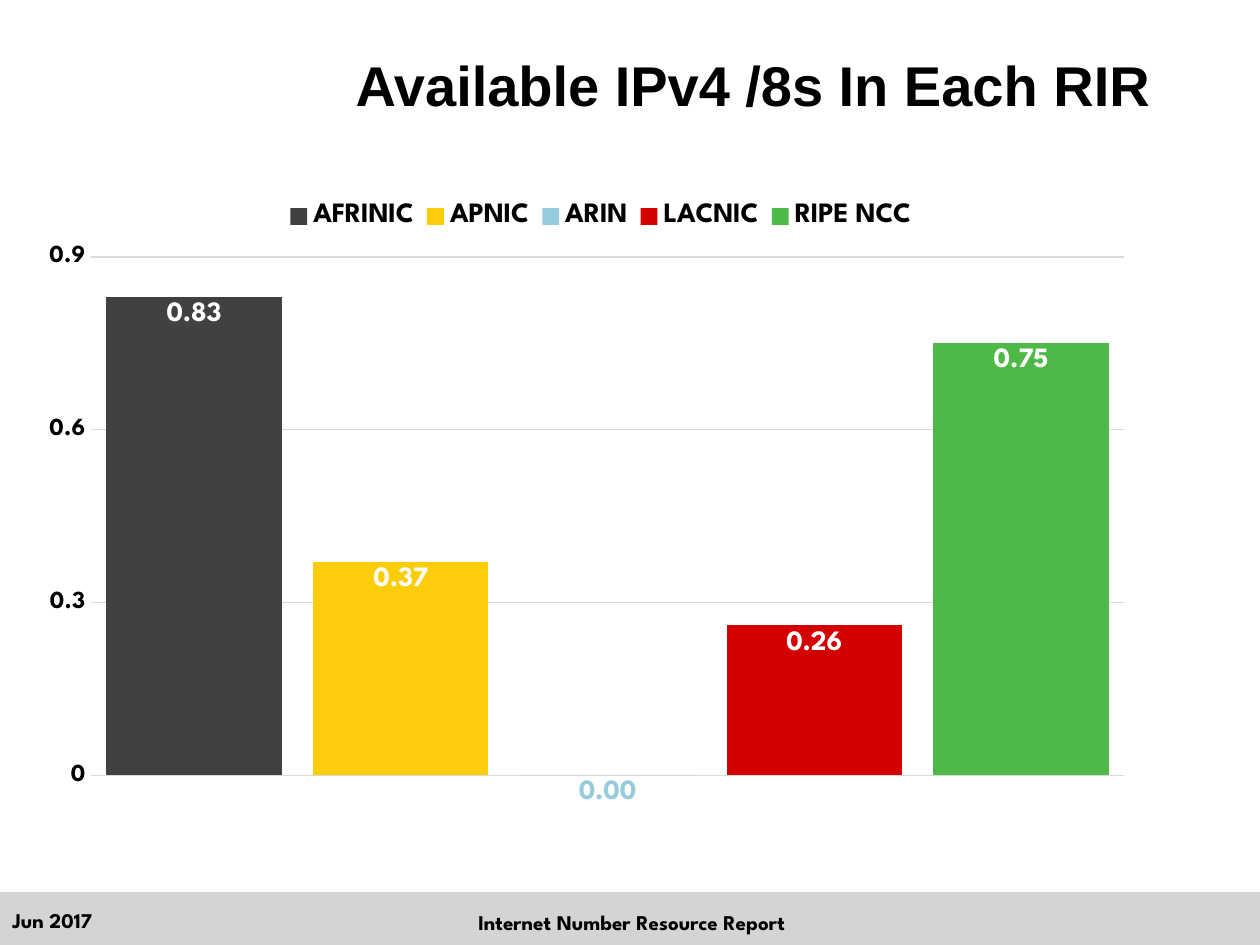
from dataclasses import dataclass

from lxml import etree
from pptx import Presentation
from pptx import util as u
from pptx.chart.data import CategoryChartData
from pptx.dml.color import RGBColor
from pptx.enum import chart as charts, shapes, text
from pptx.oxml import ns


@dataclass(frozen=True)
class Theme:
    """Colours, fonts and type sizes of the slide."""
    ink: str = "000000"
    paper: str = "FFFFFF"
    band: str = "D4D4D4"
    grid: str = "D9D9D9"
    heading_font: str = "Arial"
    body_font: str = "League Spartan"
    title_size: int = 32
    label_size: int = 16
    axis_size: int = 14
    footer_size: int = 12


THEME = Theme()
REGISTRIES = [
    ("AFRINIC", 0.83, "414141"),
    ("APNIC", 0.37, "FDCC0B"),
    ("ARIN", 0, "96CBDD"),
    ("LACNIC", 0.26, "D40000"),
    ("RIPE NCC", 0.75, "4FB948"),
]


def style_font(font, size, color=THEME.ink, name=THEME.body_font):
    """Apply the bold type used everywhere on the slide."""
    font.size = u.Pt(size)
    font.bold = True
    font.name = name
    font.color.rgb = RGBColor.from_string(color)


def write_text(shape, content, size=THEME.footer_size, name=THEME.body_font,
               align=text.PP_ALIGN.LEFT, anchor=text.MSO_ANCHOR.MIDDLE):
    """Fill a shape with one formatted paragraph."""
    frame = shape.text_frame
    frame.word_wrap = True
    frame.auto_size = text.MSO_AUTO_SIZE.NONE
    frame.vertical_anchor = anchor
    paragraph = frame.paragraphs[0]
    paragraph.alignment = align
    run = paragraph.add_run()
    run.text = content
    style_font(run.font, size, name=name)


def add_title(slide, content):
    """Place and fill the title placeholder."""
    title = slide.shapes.title
    title.left, title.top = u.Inches(1.96), u.Inches(0)
    title.width, title.height = u.Inches(8.04), u.Inches(1.34)
    write_text(title, content, size=THEME.title_size, name=THEME.heading_font,
               align=text.PP_ALIGN.CENTER)


def add_band(slide):
    """Draw the grey footer band."""
    band = slide.shapes.add_shape(
        shapes.MSO_SHAPE.RECTANGLE, u.Inches(0), u.Inches(7.08), u.Inches(10), u.Inches(0.42))
    band.shadow.inherit = False
    band.fill.solid()
    band.fill.fore_color.rgb = RGBColor.from_string(THEME.band)
    band.line.fill.background()


def add_footer(slide, content, left, top, width, height, **text_format):
    """Add a footer text box."""
    box = slide.shapes.add_textbox(*map(u.Inches, (left, top, width, height)))
    write_text(box, content, **text_format)


def set_layout(parent, index, x, y, w, h, inner=False):
    """Give a chart part a manual layout in fractions of the chart."""
    for old in parent.findall(ns.qn("c:layout")):
        parent.remove(old)
    layout = etree.Element(ns.qn("c:layout"))
    manual = etree.SubElement(layout, ns.qn("c:manualLayout"))
    settings = [("xMode", "edge"), ("yMode", "edge"), ("x", x), ("y", y), ("w", w), ("h", h)]
    if inner:
        settings.insert(0, ("layoutTarget", "inner"))
    for tag, value in settings:
        etree.SubElement(manual, ns.qn(f"c:{tag}"), val=str(value))
    parent.insert(index, layout)


def style_axes(chart):
    """Hide the category axis and format the value axis."""
    chart.category_axis.visible = False
    axis = chart.value_axis
    axis.minimum_scale, axis.maximum_scale, axis.major_unit = 0, 0.9, 0.3
    axis.major_tick_mark = axis.minor_tick_mark = charts.XL_TICK_MARK.NONE
    axis.format.line.fill.background()
    axis.tick_labels.number_format = "General"
    axis.tick_labels.number_format_is_linked = False
    style_font(axis.tick_labels.font, THEME.axis_size)
    grid = axis.major_gridlines.format.line
    grid.color.rgb = RGBColor.from_string(THEME.grid)
    grid.width = u.Pt(0.75)


def style_legend(chart):
    """Show the registries above the bars."""
    chart.has_legend = True
    legend = chart.legend
    legend.position = charts.XL_LEGEND_POSITION.BOTTOM
    legend.include_in_layout = False
    style_font(legend.font, THEME.label_size)
    set_layout(legend._element, 1, 0.22, 0.01, 0.58, 0.06)


def style_bars(series):
    """Colour each bar and label its value, tinting the label of an empty bar."""
    labels = series.data_labels
    labels.show_value = True
    labels.number_format = "0.00"
    labels.number_format_is_linked = False
    labels.position = charts.XL_LABEL_POSITION.INSIDE_END
    style_font(labels.font, THEME.label_size, THEME.paper)
    for index, (_, value, color) in enumerate(REGISTRIES):
        point = series.points[index]
        point.format.fill.solid()
        point.format.fill.fore_color.rgb = RGBColor.from_string(color)
        if value == 0:
            style_font(point.data_label.font, THEME.label_size, color)
            point.data_label.position = charts.XL_LABEL_POSITION.INSIDE_END
            label = series._element.find(".//" + ns.qn("c:dLbl"))
            number_format = etree.Element(
                ns.qn("c:numFmt"), formatCode="0.00", sourceLinked="0")
            label.insert(1, number_format)


def add_registry_chart(slide):
    """Add the column chart of available address blocks."""
    data = CategoryChartData(number_format="0.00")
    data.categories = [name for name, _, _ in REGISTRIES]
    data.add_series("Series 1", [value for _, value, _ in REGISTRIES])
    chart = slide.shapes.add_chart(
        charts.XL_CHART_TYPE.COLUMN_CLUSTERED, u.Inches(0.25), u.Inches(1.5),
        u.Inches(8.86), u.Inches(5.45), data).chart
    chart.has_title = False
    style_font(chart.font, 10)
    plot = chart.plots[0]
    plot.vary_by_categories = True
    plot.gap_width, plot.overlap = 18, -27
    style_axes(chart)
    style_legend(chart)
    style_bars(plot.series[0])
    plot_area = chart._chartSpace.find(".//" + ns.qn("c:plotArea"))
    set_layout(plot_area, 0, 0.053, 0.099, 0.926, 0.755, inner=True)


def main():
    """Build and save the slide."""
    presentation = Presentation()
    presentation.slide_width, presentation.slide_height = u.Inches(10), u.Inches(7.5)
    slide = presentation.slides.add_slide(presentation.slide_layouts[5])
    add_band(slide)
    add_title(slide, "Available IPv4 /8s In Each RIR")
    add_registry_chart(slide)
    add_footer(slide, "Internet Number Resource Report", 2.95, 7.17, 4.13, 0.25,
               align=text.PP_ALIGN.CENTER, anchor=text.MSO_ANCHOR.TOP)
    add_footer(slide, "Jun 2017", 0, 7.1, 2.25, 0.4)
    presentation.save("out.pptx")


if __name__ == "__main__":
    main()
